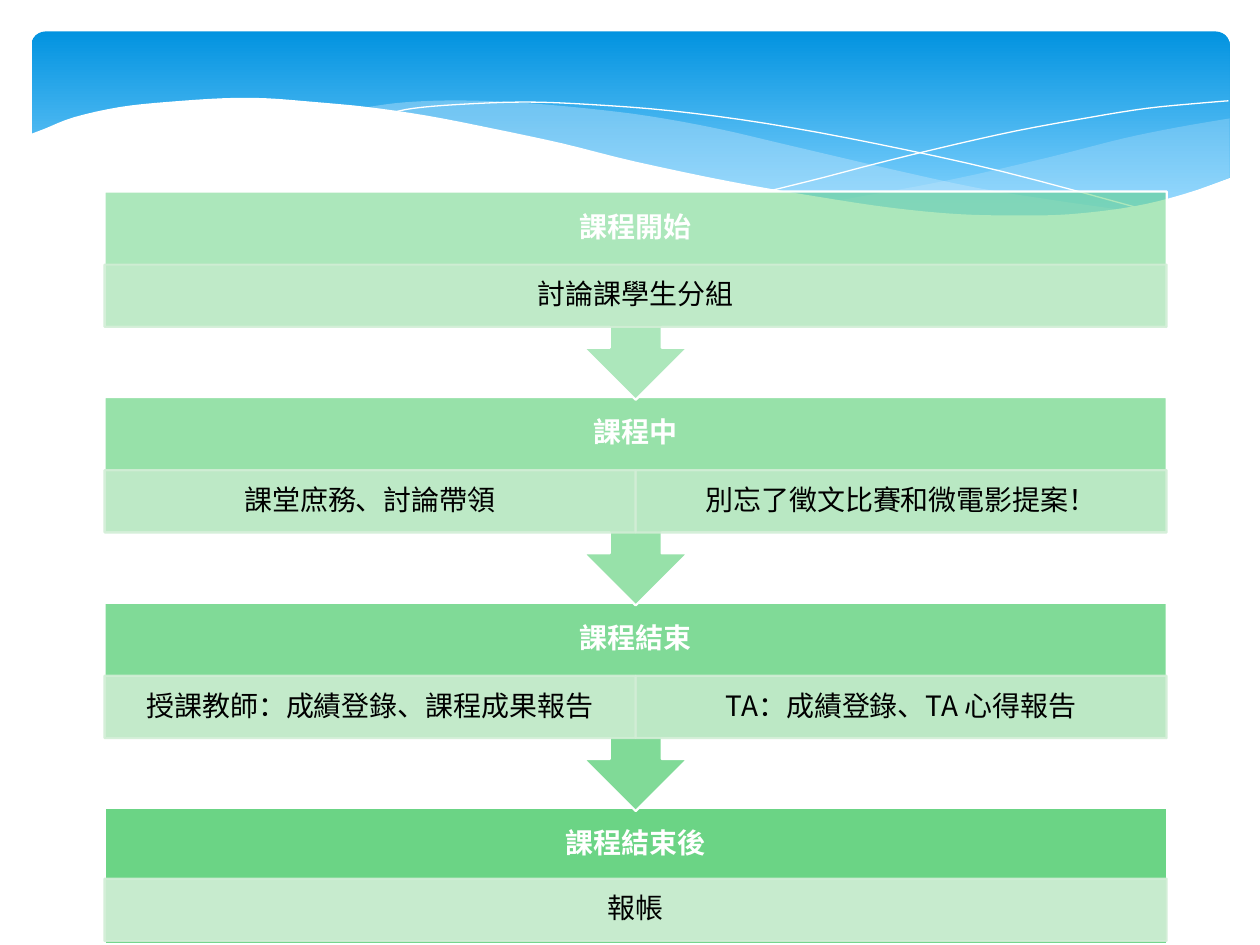
from lxml.etree import SubElement
from pptx import Presentation
from pptx.dml.color import RGBColor
from pptx.enum.shapes import MSO_SHAPE as Shape
from pptx.enum.text import MSO_ANCHOR as Anchor, PP_ALIGN as Align
from pptx.oxml.ns import qn
from pptx.util import Inches, Pt

WIDTH, HEIGHT = 10, 7.5
FONT = "Noto Sans CJK SC"
GREEN, PALE, WHITE, BLACK, ICE = "5BD078", "D2EED6", "FFFFFF", "000000", "C6E7FC"

# Heading, heading opacity, then (detail, opacity) for each cell
STAGES = [
    ("課程開始", 50, [("討論課學生分組", 50)]),
    ("課程中", 63, [("課堂庶務、討論帶領", 66), ("別忘了徵文比賽和微電影提案！", 58)]),
    ("課程結束", 77, [("授課教師：成績登錄、課程成果報告", 82),
                  ("TA：成績登錄、TA 心得報告", 74)]),
    ("課程結束後", 90, [("報帳", 90)]),
]

# Knots of the wave edges, in inches
RIGHT_WAVE = [
    [(9.76, 0.94), (9.35, 1.01), (8.91, 1.1), (8.32, 1.25), (7.53, 1.43), (6.61, 1.6)],
    [(6.61, 1.6), (7.19, 1.67), (7.69, 1.71), (8.14, 1.72), (8.54, 1.7),
     (8.89, 1.66), (9.28, 1.58), (9.76, 1.41)],
]
MIDDLE_WAVE = [
    [(8.93, 1.67), (8.37, 1.59), (7.75, 1.49), (7.06, 1.34), (6.29, 1.16),
     (5.69, 1.02), (5.14, 0.92), (4.65, 0.86), (4.2, 0.82), (3.8, 0.8),
     (3.44, 0.8), (3.13, 0.82), (2.86, 0.86)],
    [(2.86, 0.86), (3.42, 0.94), (4.04, 1.06), (4.91, 1.26), (5.66, 1.43),
     (6.34, 1.56), (6.95, 1.65), (7.48, 1.7), (7.96, 1.73), (8.38, 1.72),
     (8.93, 1.67)],
]
FALLING_LINE = [[(3.09, 0.9), (3.28, 0.86), (3.63, 0.83), (4.16, 0.81), (4.69, 0.83),
                 (5.33, 0.88), (6.08, 0.98), (6.95, 1.14), (7.95, 1.36), (9.07, 1.66)]]
RISING_LINE = [[(6.13, 1.51), (6.53, 1.41), (6.95, 1.3), (7.48, 1.17), (8.06, 1.04),
                (8.66, 0.93), (9.1, 0.86), (9.51, 0.82), (9.75, 0.8)]]
WHITE_WAVE = [
    [(9.77, 1.41), (9.4, 1.54), (8.99, 1.64), (8.5, 1.7), (8.09, 1.71),
     (7.61, 1.7), (7.08, 1.65), (6.48, 1.56), (5.79, 1.44), (5.03, 1.28),
     (4.47, 1.14), (3.91, 1.02), (3.4, 0.92), (2.92, 0.85), (2.5, 0.81),
     (2.11, 0.78), (1.77, 0.78), (1.32, 0.81), (0.95, 0.85), (0.59, 0.93),
     (0.36, 1.02), (0.23, 1.07)],
    [(0.23, 2.24), (9.77, 2.24)],
]


def rgb(color):
    return RGBColor.from_string(color)


def set_alpha(color_format_parent, opacity):
    for color in color_format_parent.iter(qn("a:srgbClr")):
        SubElement(color, qn("a:alpha")).set("val", str(opacity * 1000))


def style(shape, fill=None, opacity=100, line=None, width=1.25, line_opacity=100):
    shape.shadow.inherit = False
    if fill:
        shape.fill.solid()
        shape.fill.fore_color.rgb = rgb(fill)
        if opacity < 100:
            set_alpha(shape._element.spPr.find(qn("a:solidFill")), opacity)
    else:
        shape.fill.background()
    if line:
        shape.line.color.rgb = rgb(line)
        shape.line.width = Pt(width)
        if line_opacity < 100:
            set_alpha(shape._element.spPr.find(qn("a:ln")), line_opacity)
    else:
        shape.line.fill.background()


def write(shape, text, color, bold, inset_y):
    frame = shape.text_frame
    frame.word_wrap = True
    frame.vertical_anchor = Anchor.MIDDLE
    frame.margin_left = frame.margin_right = Inches(0.12)
    frame.margin_top = frame.margin_bottom = Inches(inset_y)
    frame.text = text
    paragraph = frame.paragraphs[0]
    paragraph.alignment = Align.CENTER
    paragraph.line_spacing = 0.9
    run = paragraph.runs[0]
    run.font.name, run.font.size, run.font.bold = FONT, Pt(16), bold
    run.font.color.rgb = rgb(color)
    SubElement(run._r.get_or_add_rPr(), qn("a:ea")).set("typeface", FONT)


def smooth(knots, steps=4):
    """Points on a Catmull-Rom curve through the knots."""
    if len(knots) < 3:
        return knots
    padded = [knots[0], *knots, knots[-1]]
    points = [knots[0]]
    for a, b, c, d in zip(padded, padded[1:], padded[2:], padded[3:]):
        for step in range(1, steps + 1):
            t = step / steps
            points.append(tuple(
                (2 * q + (r - p) * t + (2 * p - 5 * q + 4 * r - s) * t ** 2
                 + (3 * q - p - 3 * r + s) * t ** 3) / 2
                for p, q, r, s in zip(a, b, c, d)))
    return points


def add_wave(shapes, edges, closed=True, **look):
    points = [(Inches(x), Inches(y)) for edge in edges for x, y in smooth(edge)]
    builder = shapes.build_freeform(*points[0])
    builder.add_line_segments(points[1:], close=closed)
    style(builder.convert_to_shape(), **look)


def add_banner(shapes, left, top, width, height):
    banner = shapes.add_shape(Shape.ROUNDED_RECTANGLE, *map(Inches, (left, top, width, height)))
    banner.adjustments[0] = 0.071
    style(banner)
    banner.fill.gradient()
    banner.fill.gradient_angle = 270
    for stop, color, position in zip(banner.fill.gradient_stops, ("0293E0", "83D3FE"), (0, 0.9)):
        stop.color.rgb, stop.position = rgb(color), position
    add_wave(shapes, RIGHT_WAVE, fill=ICE, opacity=29)
    add_wave(shapes, MIDDLE_WAVE, fill=ICE, opacity=40)
    for curve in (FALLING_LINE, RISING_LINE):
        add_wave(shapes, curve, closed=False, line=WHITE, width=0)
    add_wave(shapes, WHITE_WAVE, fill=WHITE)


def add_stage(shapes, left, top, width, body, stage, last):
    heading, opacity, details = stage
    # Body, with an arrow to the next stage
    kind = Shape.RECTANGLE if last else Shape.UP_ARROW_CALLOUT
    height = body if last else body / 0.65
    block = shapes.add_shape(kind, *map(Inches, (left, top, width, height)))
    block.rotation = 0 if last else 180
    style(block, GREEN, opacity, WHITE)
    # Heading
    label = shapes.add_textbox(*map(Inches, (left, top, width, body * 0.54)))
    write(label, heading, WHITE, True, 0.12)
    # Detail cells share the width
    cell_top = top + body * (0.52 if last else 0.54)
    cell_width = width / len(details)
    for column, (detail, cell_opacity) in enumerate(details):
        cell = shapes.add_shape(Shape.RECTANGLE, *map(Inches, (
            left + column * cell_width, cell_top, cell_width, body * 0.46)))
        style(cell, PALE, cell_opacity, PALE, line_opacity=90)
        write(cell, detail, BLACK, False, 0.02)


def add_process(shapes, left, top, width, height):
    body = height * 0.18
    pitch = (height - body) / (len(STAGES) - 1)
    # Later stages lie behind the arrows that point at them
    for row, stage in reversed(list(enumerate(STAGES))):
        add_stage(shapes, left, top + row * pitch, width, body, stage,
                  last=row == len(STAGES) - 1)


def main():
    deck = Presentation()
    deck.slide_width, deck.slide_height = Inches(WIDTH), Inches(HEIGHT)
    shapes = deck.slides.add_slide(deck.slide_layouts[6]).shapes
    add_banner(shapes, 0.025 * WIDTH, HEIGHT / 30, 0.951 * WIDTH, 0.208 * HEIGHT)
    add_process(shapes, 0.083 * WIDTH, 1.52, 0.843 * WIDTH, 5.97)
    deck.save("out.pptx")


if __name__ == "__main__":
    main()
